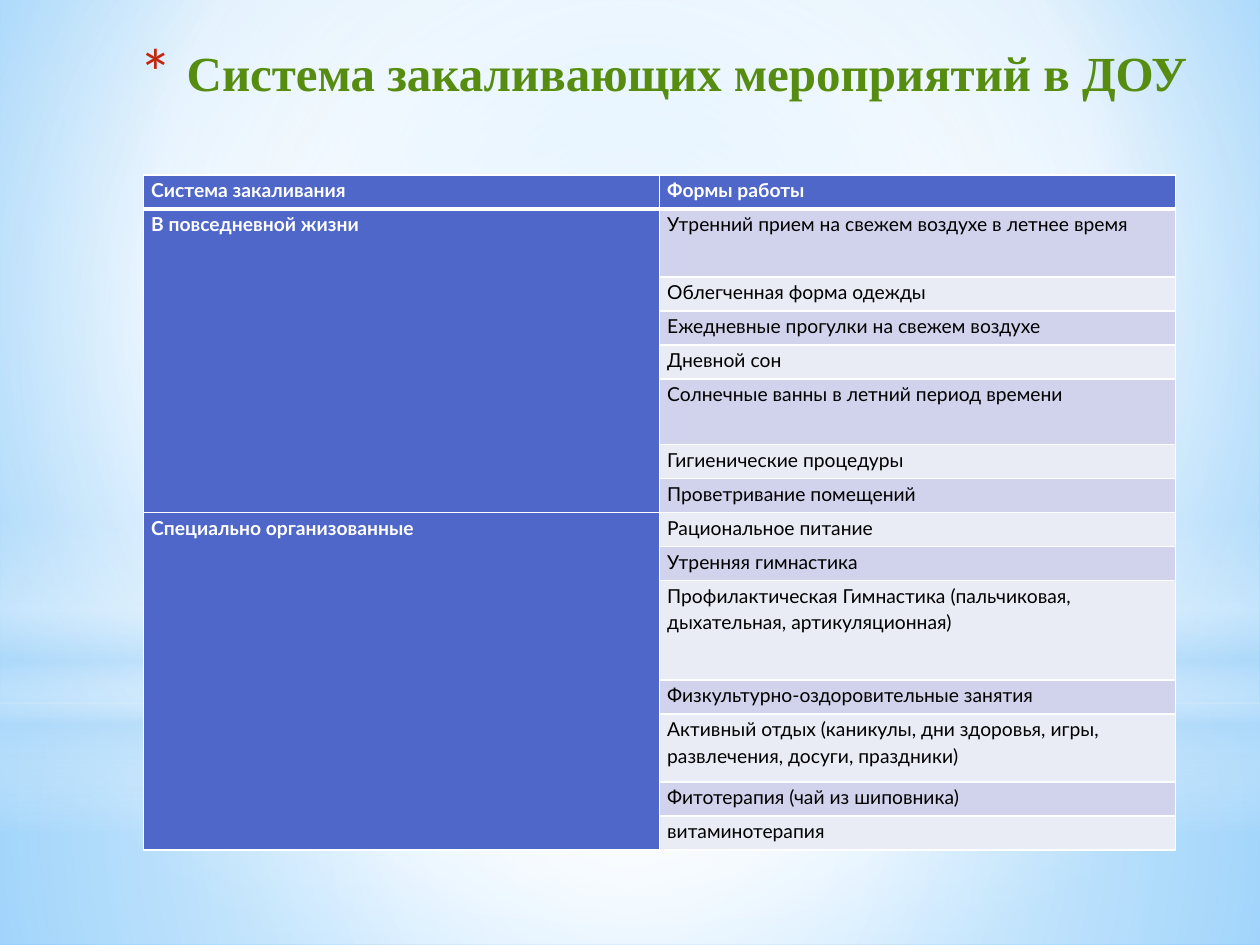
from dataclasses import dataclass

from pptx import Presentation
from pptx import util as u
from pptx.dml.color import RGBColor
from pptx.enum import shapes, text
from pptx.oxml import parse_xml
from pptx.oxml.ns import nsdecls, qn


@dataclass(frozen=True)
class Theme:
    title_color: str = "568D11"
    bullet_color: str = "C3260C"
    accent: str = "4E67C8"
    bands: tuple = ("D0D3EB", "E9EBF5")
    white: str = "FFFFFF"
    black: str = "000000"
    haze: str = "B4DCFA"
    sky: str = "9ED5FF"
    deep_sky: str = "5BB9FF"
    title_font: str = "Times New Roman"
    table_font: str = "Lato"
    title_size: int = 28
    table_size: int = 11


THEME = Theme()
TITLE = "Система закаливающих мероприятий в ДОУ"
HEADINGS = ("Система закаливания", "Формы работы")
ROW_HEIGHT = 0.27
# Each group: name, then (form of work, row height)
GROUPS = (
    ("В повседневной жизни", (
        ("Утренний прием на свежем воздухе в летнее время", 0.54),
        ("Облегченная форма одежды", ROW_HEIGHT),
        ("Ежедневные прогулки на свежем воздухе", ROW_HEIGHT),
        ("Дневной сон", ROW_HEIGHT),
        ("Солнечные ванны в летний период времени", 0.52),
        ("Гигиенические процедуры", ROW_HEIGHT),
        ("Проветривание помещений", ROW_HEIGHT),
    )),
    ("Специально организованные", (
        ("Рациональное питание", ROW_HEIGHT),
        ("Утренняя гимнастика", ROW_HEIGHT),
        ("Профилактическая Гимнастика (пальчиковая, дыхательная, артикуляционная)", 0.79),
        ("Физкультурно-оздоровительные занятия", ROW_HEIGHT),
        ("Активный отдых (каникулы, дни здоровья, игры, развлечения, досуги, праздники)", 0.54),
        ("Фитотерапия (чай из шиповника)", ROW_HEIGHT),
        ("витаминотерапия", ROW_HEIGHT),
    )),
)


def inches(box):
    return [u.Inches(value) for value in box]


def set_font(font, name, size, color, bold):
    for key, value in {"name": name, "size": u.Pt(size), "bold": bold}.items():
        setattr(font, key, value)
    font.color.rgb = RGBColor.from_string(color)


def fill_gradient(owner, fill, stops, center=(50, 50, 50, 50), angle=None):
    """Stops are (position, colour, opacity) in percent; no angle means circular."""
    fill.gradient()
    old = next(owner.iter(qn("a:gradFill")))
    stop_list = "".join(
        f'<a:gs pos="{pos * 1000}"><a:srgbClr val="{color}">'
        f'<a:alpha val="{opacity * 1000}"/></a:srgbClr></a:gs>'
        for pos, color, opacity in stops)
    if angle is None:
        sides = " ".join(f'{side}="{value * 1000}"' for side, value in zip("ltrb", center))
        direction = f'<a:path path="circle"><a:fillToRect {sides}/></a:path>'
    else:
        direction = f'<a:lin ang="{angle * 60000}" scaled="0"/>'
    old.getparent().replace(old, parse_xml(
        f'<a:gradFill {nsdecls("a")} rotWithShape="1">'
        f"<a:gsLst>{stop_list}</a:gsLst>{direction}</a:gradFill>"))


def add_glow(slide, kind, box, stops, angle=None):
    glow = slide.shapes.add_shape(kind, *inches(box))
    glow.shadow.inherit = False
    glow.line.fill.background()
    fill_gradient(glow._element, glow.fill, stops, angle=angle)


def add_backdrop(slide, width, height):
    white, haze = THEME.white, THEME.haze
    rectangle, oval = shapes.MSO_SHAPE.RECTANGLE, shapes.MSO_SHAPE.OVAL
    fill_gradient(slide._element, slide.background.fill,
                  [(0, THEME.sky, 100), (60, white, 100), (100, THEME.deep_sky, 100)],
                  center=(20, 10, 20, 60))
    horizon = 5.58
    add_glow(slide, rectangle, (0, horizon, width, height - horizon),
             [(0, white, 91), (37, white, 76), (100, haze, 79)])
    add_glow(slide, rectangle, (0, 0, width, horizon),
             [(0, white, 89), (48, white, 62), (100, haze, 79)])
    add_glow(slide, rectangle, (0, 4.12, width, 2.5),
             [(0, white, 0), (29, white, 30), (45, haze, 40),
              (55, white, 26), (65, haze, 60), (100, white, 0)], angle=90)
    add_glow(slide, oval, (0, 1.75, width, horizon), [(0, white, 100), (56, white, 0)])


def place_title(slide, box):
    title = slide.shapes.title
    slide.shapes._spTree.append(title._element)  # in front of the backdrop
    for key, value in zip(("left", "top", "width", "height"), inches(box)):
        setattr(title, key, value)
    frame = title.text_frame
    frame.text = TITLE
    for key, value in {"word_wrap": True, "auto_size": text.MSO_AUTO_SIZE.NONE,
                       "vertical_anchor": text.MSO_ANCHOR.TOP}.items():
        setattr(frame, key, value)
    line = frame.paragraphs[0]
    line.alignment = text.PP_ALIGN.RIGHT
    set_font(line.runs[0].font, THEME.title_font, THEME.title_size, THEME.title_color, True)
    props = line._p.get_or_add_pPr()
    indent = u.Inches(0.35)
    props.set("marL", str(indent))
    props.set("indent", str(-indent))
    for bullet in (f'buClr {nsdecls("a")}><a:srgbClr val="{THEME.bullet_color}"/></a:buClr>',
                   f'buSzPct {nsdecls("a")} val="128000"/>',
                   f'buFont {nsdecls("a")} typeface="{THEME.table_font}"/>',
                   f'buChar {nsdecls("a")} char="*"/>'):
        props.append(parse_xml(f"<a:{bullet}"))


def set_borders(cell, top=1, bottom=1):
    widths = {"lnL": 1, "lnR": 1, "lnT": top, "lnB": bottom}
    for index, (side, width) in enumerate(widths.items()):
        cell._tc.get_or_add_tcPr().insert(index, parse_xml(
            f'<a:{side} {nsdecls("a")} w="{u.Pt(width)}"><a:solidFill>'
            f'<a:srgbClr val="{THEME.white}"/></a:solidFill></a:{side}>'))


def format_cell(cell, words, fill, color, bold):
    for key, value in {"margin_left": 0.06, "margin_right": 0.06,
                       "margin_top": 0, "margin_bottom": 0}.items():
        setattr(cell, key, u.Inches(value))
    cell.fill.solid()
    cell.fill.fore_color.rgb = RGBColor.from_string(fill)
    cell.text = words
    line = cell.text_frame.paragraphs[0]
    line.line_spacing = 1.15
    set_font(line.font if not words else line.runs[0].font,
             THEME.table_font, THEME.table_size, color, bold)


def add_activity_table(slide, box):
    forms = [form for _, group in GROUPS for form in group]
    heights = [ROW_HEIGHT] + [height for _, height in forms]
    table = slide.shapes.add_table(len(heights), len(HEADINGS), *inches(box)).table
    for row, height in zip(table.rows, heights):
        row.height = u.Inches(height)
    for column in table.columns:
        column.width = u.Inches(box[2] / len(HEADINGS))

    for index, heading in enumerate(HEADINGS):
        format_cell(table.cell(0, index), heading, THEME.accent, THEME.white, True)
    first = 1
    for name, group in GROUPS:
        last = first + len(group) - 1
        for row, (form, _) in enumerate(group, first):
            format_cell(table.cell(row, 0), name if row == first else "",
                        THEME.accent, THEME.white, True)
            format_cell(table.cell(row, 1), form, THEME.bands[(row - 1) % 2],
                        THEME.black, False)
        table.cell(first, 0).merge(table.cell(last, 0))
        first = last + 1
    for row in range(len(heights)):
        for column in range(len(HEADINGS)):
            set_borders(table.cell(row, column), top=3 if row == 1 else 1,
                        bottom=3 if row == 0 else 1)


def main():
    width, height = 10, 7.5
    deck = Presentation()
    deck.slide_width, deck.slide_height = inches((width, height))
    slide = deck.slides.add_slide(deck.slide_layouts[5])
    add_backdrop(slide, width, height)
    place_title(slide, (0.98, 0.29, 8.54, 0.94))
    add_activity_table(slide, (1.14, 1.39, 8.19, 5.35))
    deck.save("out.pptx")


if __name__ == "__main__":
    main()
